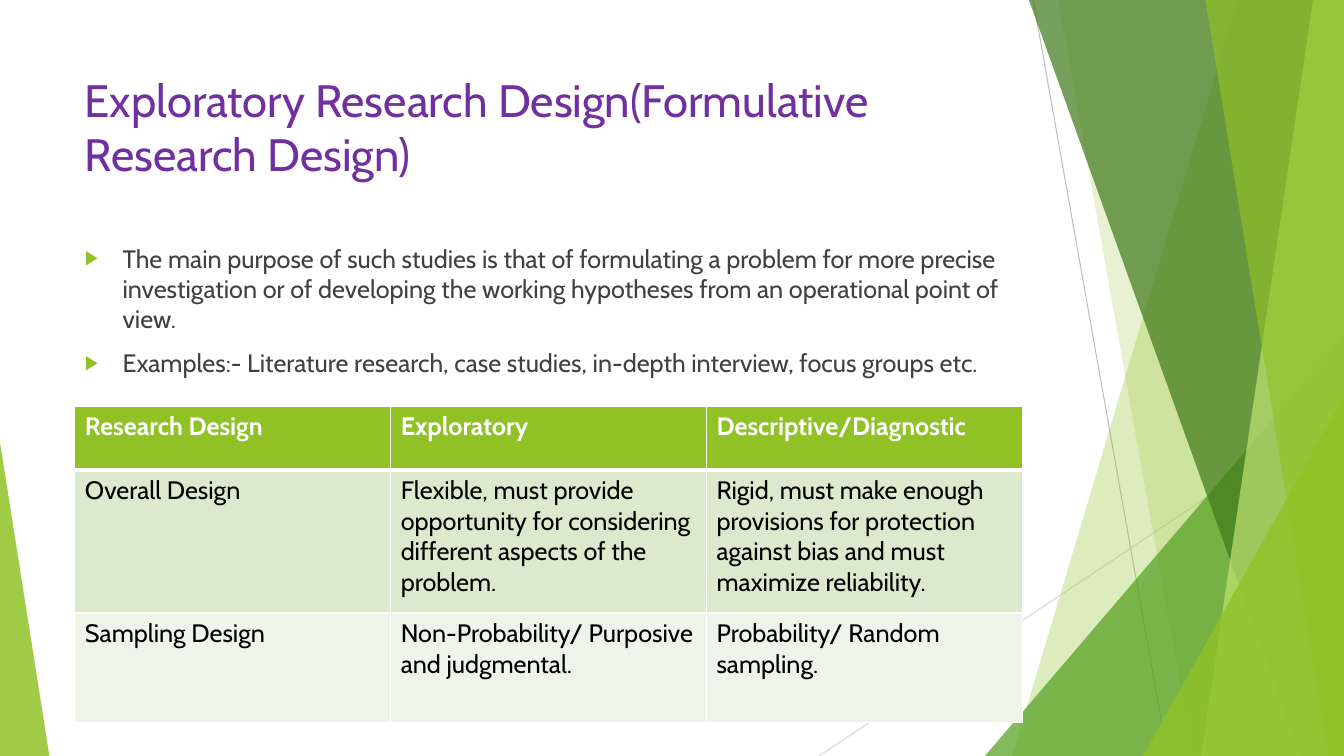
from pptx import Presentation
from pptx.dml.color import RGBColor
from pptx.enum.shapes import MSO_CONNECTOR, MSO_SHAPE
from pptx.oxml import parse_xml
from pptx.oxml.ns import nsdecls, qn
from pptx.util import Pt
from lxml.etree import SubElement

WIDTH, HEIGHT = 960, 540
FONT = "Cabin"
GREEN = "90C226"

# x at the top, x at the bottom, colour, opacity in percent
BANDS_BEHIND = [(884, 723, GREEN, 30), (756, 852, GREEN, 20)]
BANDS_IN_FRONT = [
    (735, 929, "3F7819", 70),
    (938, 858, "C0E474", 70),
    (861, 949, GREEN, 65),
]
BULLETS = [
    "The main purpose of such studies is that of formulating a problem for more precise "
    "investigation or of developing the working hypotheses from an operational point of view.",
    "Examples:- Literature research, case studies, in-depth interview, focus groups etc.",
]
ROWS = [
    ["Research Design", "Exploratory", "Descriptive/Diagnostic"],
    ["Overall Design",
     "Flexible, must provide opportunity for considering different aspects of the problem.",
     "Rigid, must make enough provisions for protection against bias and must "
     "maximize reliability."],
    ["Sampling Design", "Non-Probability/ Purposive and judgmental.",
     "Probability/ Random sampling."],
]
ROW_HEIGHTS = [45.4, 102.2, 78.5]
ROW_FILLS = [GREEN, "DBE9CD", "EEF4E8"]


def rgb(color):
    return RGBColor.from_string(color)


def set_font(paragraph, size, color, bold=False):
    font = paragraph.font
    font.name, font.size, font.bold = FONT, Pt(size), bold
    font.color.rgb = rgb(color)


def paint(shape, color, opacity):
    shape.shadow.inherit = False
    shape.line.fill.background()
    shape.fill.solid()
    shape.fill.fore_color.rgb = rgb(color)
    solid_color = shape.fill._xPr.find(qn("a:solidFill"))[0]
    SubElement(solid_color, qn("a:alpha"), val=str(opacity * 1000))


def add_line(slide, start, end, color):
    line = slide.shapes.add_connector(
        MSO_CONNECTOR.STRAIGHT, *(Pt(value) for value in start + end))
    line.line.color.rgb = rgb(color)
    line.line.width = Pt(0.75)
    SubElement(line._element.spPr, qn("a:effectLst"))


def add_band(slide, top_x, bottom_x, color, opacity):
    """Fill from a slanted left edge to the right edge of the slide."""
    builder = slide.shapes.build_freeform(top_x, 0, scale=Pt(1))
    builder.add_line_segments([(WIDTH, 0), (WIDTH, HEIGHT), (bottom_x, HEIGHT)])
    paint(builder.convert_to_shape(), color, opacity)


def add_corner(slide, left, top, width, apex, color, opacity):
    """Triangle standing on the bottom edge of the slide."""
    shape = slide.shapes.add_shape(
        MSO_SHAPE.ISOSCELES_TRIANGLE, Pt(left), Pt(top), Pt(width), Pt(HEIGHT - top))
    shape.adjustments[0] = apex
    paint(shape, color, opacity)


def add_backdrop(slide):
    add_line(slide, (738, 0), (834, HEIGHT), "BFBFBF")
    add_line(slide, (WIDTH, 290), (585, HEIGHT), "D9D9D9")
    for band in BANDS_BEHIND:
        add_band(slide, *band)
    add_corner(slide, 703.5, 240, 256.5, 1, "54A021", 72)
    for band in BANDS_IN_FRONT:
        add_band(slide, *band)
    add_corner(slide, 816.5, 283, 143.5, 1, GREEN, 80)
    add_corner(slide, 0, 316, 35.3, 0, GREEN, 85)


def add_text_frame(slide, left, top, width, height):
    frame = slide.shapes.add_textbox(Pt(left), Pt(top), Pt(width), Pt(height)).text_frame
    frame.word_wrap = True
    return frame


def add_title(slide, left, top, width, height):
    frame = add_text_frame(slide, left, top, width, height)
    frame.text = "Exploratory Research Design(Formulative \vResearch Design)"
    set_font(frame.paragraphs[0], 32.4, "7030A0")


def add_bullets(slide, left, top, width, height):
    frame = add_text_frame(slide, left, top, width, height)
    frame.text = "\n".join(BULLETS)
    for paragraph in frame.paragraphs:
        set_font(paragraph, 18, "404040")
        paragraph.space_before = Pt(10)
        properties = paragraph._p.get_or_add_pPr()
        properties.set("marL", str(Pt(27)))
        properties.set("indent", str(Pt(-27)))
        bullet_color = SubElement(properties, qn("a:buClr"))
        SubElement(bullet_color, qn("a:srgbClr"), val=GREEN)
        SubElement(properties, qn("a:buSzPct"), val="80000")
        SubElement(properties, qn("a:buFont"), typeface="Arial")
        SubElement(properties, qn("a:buChar"), char="▶")
        # Bullet settings must precede the default run properties
        defaults = properties.find(qn("a:defRPr"))
        if defaults is not None:
            properties.append(defaults)


def add_borders(cell, bottom_width, top_width):
    properties = cell._tc.get_or_add_tcPr()
    for side, width in (("L", 1), ("R", 1), ("T", top_width), ("B", bottom_width)):
        properties.append(parse_xml(
            f'<a:ln{side} {nsdecls("a")} w="{Pt(width)}"><a:solidFill>'
            f'<a:srgbClr val="FFFFFF"/></a:solidFill></a:ln{side}>'))


def add_design_table(slide, left, top, width):
    table = slide.shapes.add_table(
        len(ROWS), len(ROWS[0]), Pt(left), Pt(top), Pt(width), Pt(sum(ROW_HEIGHTS))).table
    for column in table.columns:
        column.width = Pt(width / len(ROWS[0]))
    for row_index, texts in enumerate(ROWS):
        table.rows[row_index].height = Pt(ROW_HEIGHTS[row_index])
        header = row_index == 0
        for column_index, text in enumerate(texts):
            cell = table.cell(row_index, column_index)
            cell.text = text
            set_font(cell.text_frame.paragraphs[0], 18,
                     "FFFFFF" if header else "000000", header)
            add_borders(cell, 3 if header else 1, 3 if row_index == 1 else 1)
            cell.fill.solid()
            cell.fill.fore_color.rgb = rgb(ROW_FILLS[row_index])


def main():
    presentation = Presentation()
    presentation.slide_width, presentation.slide_height = Pt(WIDTH), Pt(HEIGHT)
    slide = presentation.slides.add_slide(presentation.slide_layouts[6])
    left, width = 53.5, 676.8
    add_backdrop(slide)
    add_title(slide, left, 48, width, 104)
    add_bullets(slide, left, 170, width, 305)
    add_design_table(slide, left, 290.3, width)
    presentation.save("out.pptx")


if __name__ == "__main__":
    main()
